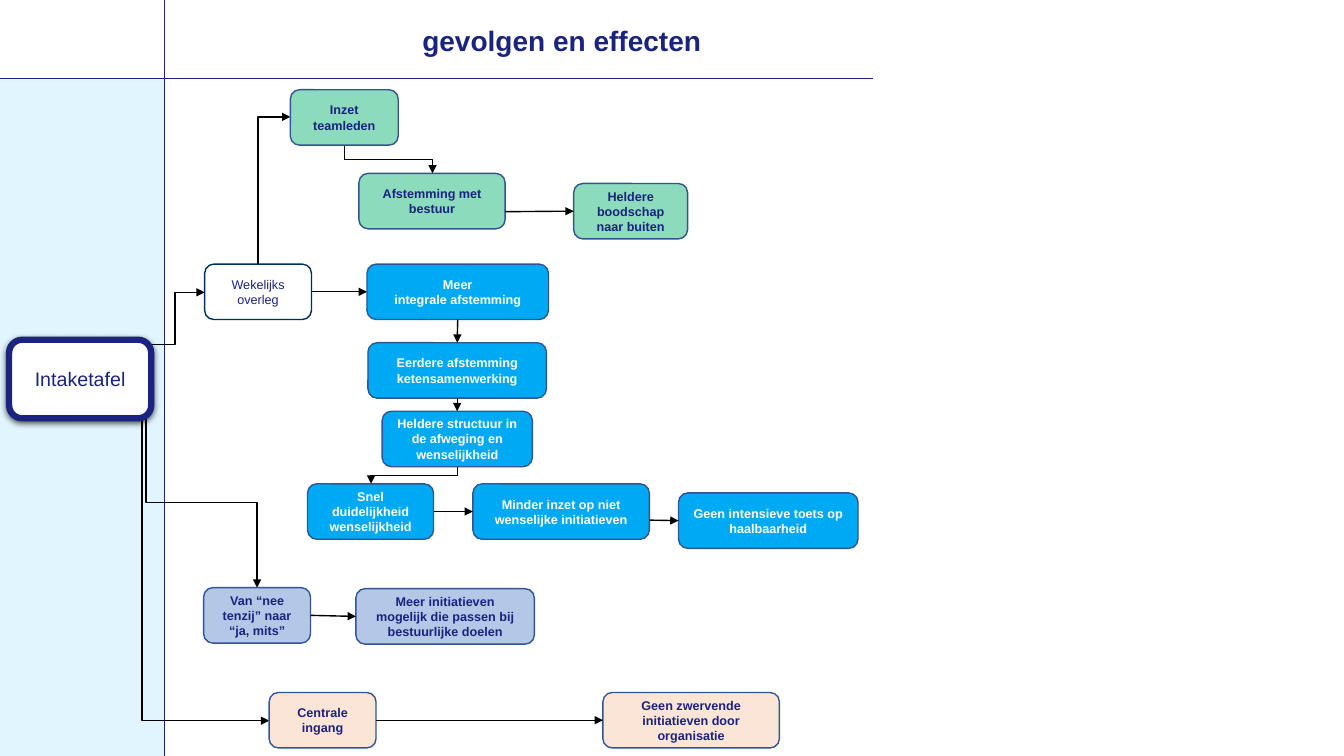
from dataclasses import dataclass

import pptx
import pptx.dml.color
import pptx.enum.dml
import pptx.enum.shapes
import pptx.enum.text
import pptx.oxml
import pptx.oxml.ns
import pptx.util
from lxml import etree

Inches = pptx.util.Inches
Pt = pptx.util.Pt
RGBColor = pptx.dml.color.RGBColor
qn = pptx.oxml.ns.qn
SHAPE = pptx.enum.shapes.MSO_SHAPE
CONNECTOR = pptx.enum.shapes.MSO_CONNECTOR

NAVY = RGBColor(0x1A, 0x23, 0x7E)
BLACK = RGBColor(0x00, 0x00, 0x00)
WHITE = RGBColor(0xFF, 0xFF, 0xFF)
PALE_BLUE = RGBColor(0xE1, 0xF5, 0xFE)
GREEN = RGBColor(0x8C, 0xDB, 0xBC)
BLUE = RGBColor(0x00, 0xA9, 0xF3)
LAVENDER = RGBColor(0xB4, 0xC7, 0xE7)
PEACH = RGBColor(0xFB, 0xE5, 0xD6)
STEEL = RGBColor(0x32, 0x54, 0x91)
DARK_BLUE = RGBColor(0x00, 0x2F, 0x5F)

FONT = "Arial"
EFFECT_HEIGHT = 0.55
TOP, LEFT, BOTTOM, RIGHT = range(4)


@dataclass
class Effect:
    key: str
    text: str
    left: float
    top: float
    width: float
    fill: RGBColor
    color: RGBColor = NAVY
    border: RGBColor = STEEL
    bold: bool = True


@dataclass
class Elbow:
    start: tuple[float, float]
    end: tuple[float, float]
    starts_vertical: bool = True
    bends: int = 2


@dataclass
class Link:
    source: str
    target: str
    source_side: int = RIGHT
    target_side: int = LEFT
    loose_start: tuple[float, float] | None = None


EFFECTS = [
    Effect("inzet", "Inzet teamleden", 2.88, 0.89, 1.07, GREEN),
    Effect("bestuur", "Afstemming met bestuur", 3.56, 1.72, 1.45, GREEN),
    Effect("boodschap", "Heldere boodschap naar buiten", 5.69, 1.82, 1.13, GREEN),
    Effect("overleg", "Wekelijks overleg", 2.03, 2.62, 1.06, WHITE, NAVY, DARK_BLUE, False),
    Effect("integraal", "Meer\nintegrale afstemming", 3.64, 2.62, 1.8, BLUE, WHITE),
    Effect("keten", "Eerdere afstemming ketensamenwerking", 3.65, 3.4, 1.77, BLUE, WHITE),
    Effect("structuur", "Heldere structuur in de afweging en wenselijkheid",
           3.79, 4.08, 1.49, BLUE, WHITE),
    Effect("snel", "Snel duidelijkheid wenselijkheid", 3.05, 4.8, 1.25, BLUE, WHITE),
    Effect("minder", "Minder inzet op niet wenselijke initiatieven", 4.69, 4.8, 1.75, BLUE, WHITE),
    Effect("toets", "Geen intensieve toets op haalbaarheid", 6.73, 4.89, 1.78, BLUE, WHITE),
    Effect("ja_mits", "Van “nee tenzij” naar “ja, mits”", 2.02, 5.83, 1.06, LAVENDER),
    Effect("mogelijk", "Meer initiatieven mogelijk die passen bij bestuurlijke doelen",
           3.53, 5.84, 1.77, LAVENDER),
    Effect("ingang", "Centrale ingang", 2.67, 6.87, 1.06, PEACH),
    Effect("zwervend", "Geen zwervende initiatieven door organisatie", 5.98, 6.87, 1.75, PEACH),
]

ELBOWS = [
    Elbow((1.44, 3.42), (2.03, 2.9), starts_vertical=False),
    Elbow((1.45, 4.14), (2.55, 5.83)),
    Elbow((1.41, 4.12), (2.67, 7.15), bends=1),
    Elbow((2.56, 2.62), (2.88, 1.16), bends=1),
    Elbow((3.42, 1.44), (4.29, 1.72)),
    Elbow((4.54, 4.63), (3.68, 4.8)),
]

LINKS = [
    Link("bestuur", "boodschap", loose_start=(5.01, 2.1)),
    Link("overleg", "integraal"),
    Link("integraal", "keten", BOTTOM, TOP),
    Link("keten", "structuur", BOTTOM, TOP),
    Link("snel", "minder"),
    Link("minder", "toets", loose_start=(6.44, 5.16)),
    Link("ja_mits", "mogelijk"),
    Link("ingang", "zwervend"),
]


def add_line(slide, kind, start, end, color: RGBColor, arrow: bool = False):
    line = slide.shapes.add_connector(kind, *(Inches(v) for v in (*start, *end)))
    line.line.color.rgb = color
    line.line.width = Pt(1)
    properties = line._element.spPr
    if arrow:
        etree.SubElement(properties.find(qn("a:ln")), qn("a:tailEnd"), type="triangle")
    etree.SubElement(properties, qn("a:effectLst"))
    return line


def add_elbow(slide, elbow: Elbow) -> None:
    connector = add_line(slide, CONNECTOR.ELBOW, elbow.start, elbow.end, BLACK, True)
    properties = connector._element.spPr
    if elbow.bends == 1:
        properties.find(qn("a:prstGeom")).set("prst", "bentConnector2")
    if not elbow.starts_vertical:
        return
    (x1, y1), (x2, y2) = elbow.start, elbow.end
    across, down = abs(x2 - x1), abs(y2 - y1)
    connector.left = Inches((x1 + x2 - down) / 2)
    connector.top = Inches((y1 + y2 - across) / 2)
    connector.width, connector.height = Inches(down), Inches(across)
    if y2 < y1:
        rotation, flip_h, flip_v = 90, 1, 1
    elif x2 > x1:
        rotation, flip_h, flip_v = 270, 1, 0
    else:
        rotation, flip_h, flip_v = 90, 0, 0
    frame = properties.find(qn("a:xfrm"))
    frame.set("rot", str(rotation * 60000))
    frame.set("flipH", str(flip_h))
    frame.set("flipV", str(flip_v))


def add_panel(slide, kind, box, fill: RGBColor, border: RGBColor, width: float = 1):
    panel = slide.shapes.add_shape(kind, *(Inches(v) for v in box))
    panel.shadow.inherit = False
    panel.fill.solid()
    panel.fill.fore_color.rgb = fill
    panel.line.color.rgb = border
    panel.line.width = Pt(width)
    return panel


def write(shape, text: str, size: float, color: RGBColor, bold: bool, align) -> None:
    frame = shape.text_frame
    frame.word_wrap = True
    frame.text = text
    for paragraph in frame.paragraphs:
        paragraph.alignment = align
        paragraph.font.name = FONT
        paragraph.font.size = Pt(size)
        paragraph.font.bold = bold
        paragraph.font.color.rgb = color


def add_effect(slide, effect: Effect):
    box = (effect.left, effect.top, effect.width, EFFECT_HEIGHT)
    panel = add_panel(slide, SHAPE.ROUNDED_RECTANGLE, box, effect.fill, effect.border)
    panel.text_frame.vertical_anchor = pptx.enum.text.MSO_ANCHOR.MIDDLE
    write(panel, effect.text, 9, effect.color, effect.bold, pptx.enum.text.PP_ALIGN.CENTER)
    return panel


def add_intake(slide) -> None:
    intake = add_panel(slide, SHAPE.ROUNDED_RECTANGLE, (0.09, 3.37, 1.41, 0.78), WHITE, NAVY, 4.5)
    frame = intake.text_frame
    frame.margin_left = frame.margin_right = Inches(0.04)
    frame.margin_top = frame.margin_bottom = Inches(0.04)
    frame.vertical_anchor = pptx.enum.text.MSO_ANCHOR.MIDDLE
    write(intake, "Intaketafel", 14, NAVY, False, pptx.enum.text.PP_ALIGN.CENTER)
    effects = intake._element.spPr.find(qn("a:effectLst"))
    shadow = etree.SubElement(effects, qn("a:outerShdw"), blurRad=str(Pt(4.5)),
                              dist=str(Pt(1.5)), dir="5400000", rotWithShape="0")
    color = etree.SubElement(shadow, qn("a:srgbClr"), val=str(BLACK))
    etree.SubElement(color, qn("a:alpha"), val="63000")


def add_link(slide, link: Link, panels: dict) -> None:
    start = link.loose_start or (0, 0)
    arrow = add_line(slide, CONNECTOR.STRAIGHT, start, start, BLACK, True)
    if link.loose_start is None:
        arrow.begin_connect(panels[link.source], link.source_side)
    arrow.end_connect(panels[link.target], link.target_side)


def main() -> None:
    presentation = pptx.Presentation()
    presentation.slide_width = Inches(13.33)
    presentation.slide_height = Inches(7.5)
    slide = presentation.slides.add_slide(presentation.slide_layouts[6])

    add_panel(slide, SHAPE.RECTANGLE, (-0.01, 0.78, 1.64, 6.73), PALE_BLUE, NAVY)
    add_line(slide, CONNECTOR.STRAIGHT, (0, 0.78), (8.66, 0.78), NAVY)
    add_line(slide, CONNECTOR.STRAIGHT, (1.63, 0), (1.63, 0.78), NAVY)
    title = slide.shapes.add_textbox(Inches(4.09), Inches(0.18), Inches(3.13), Inches(0.44))
    write(title, "gevolgen en effecten", 20, NAVY, True, pptx.enum.text.PP_ALIGN.LEFT)

    for elbow in ELBOWS:
        add_elbow(slide, elbow)
    add_intake(slide)
    panels = {effect.key: add_effect(slide, effect) for effect in EFFECTS}
    for link in LINKS:
        add_link(slide, link, panels)

    presentation.save("out.pptx")


if __name__ == "__main__":
    main()
